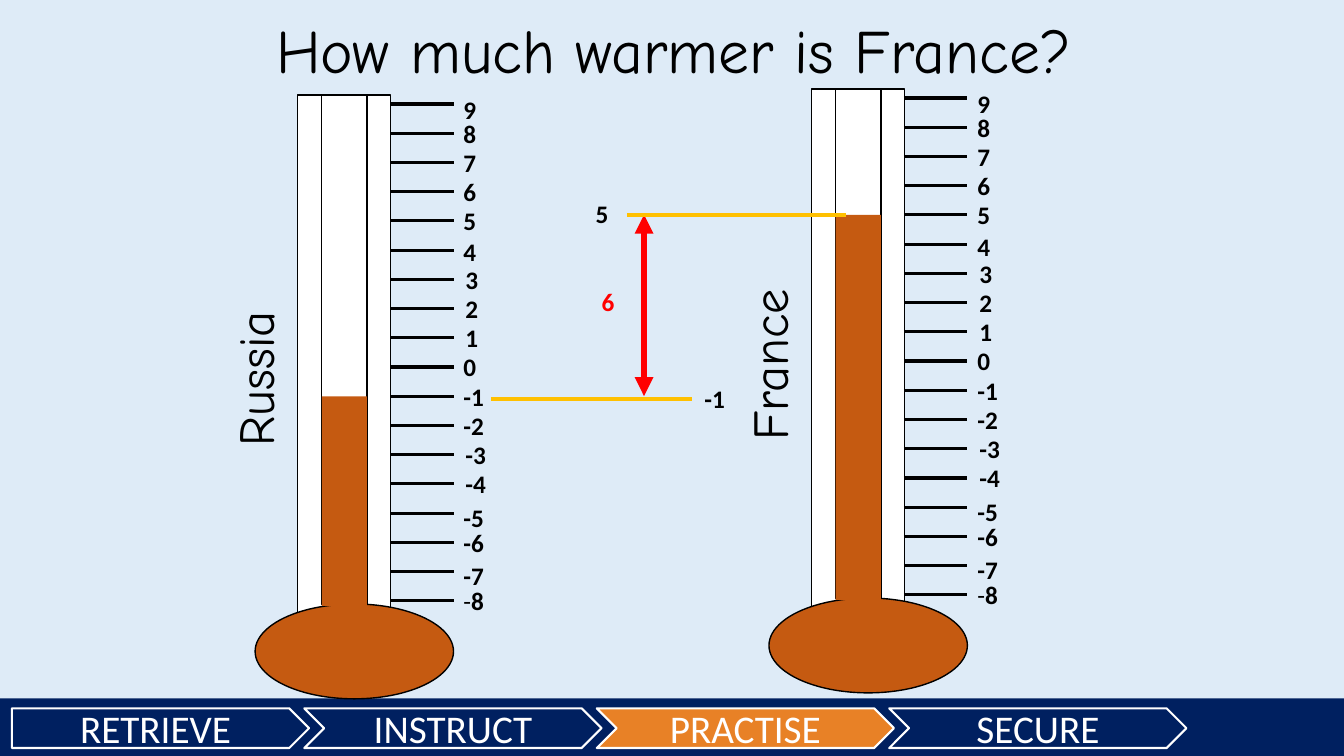
from pptx import Presentation
from pptx import util as u
from pptx.dml import color
from pptx.enum import shapes, text
from pptx.oxml import ns
from lxml import etree

BLACK, WHITE, NAVY, RUST, GOLD, RED = "000000", "FFFFFF", "002060", "C55A11", "FFC000", "FF0000"
KIND = shapes.MSO_SHAPE
STEP = 12.52 / 17
TOP = 0.23


def rgb(code):
    return color.RGBColor.from_string(code)


def write(frame, runs, font="Calibri", size=18, ink=BLACK):
    para = frame.paragraphs[0]
    for words, bold in runs:
        run = para.add_run()
        run.text = words
        run.font.name = font
        run.font.size = u.Pt(size)
        run.font.bold = bold
        run.font.color.rgb = rgb(ink)
    return para


def label(slide, x, y, w, h, runs, **style):
    box = slide.shapes.add_textbox(u.Cm(x), u.Cm(y), u.Cm(w), u.Cm(h))
    box.text_frame.word_wrap = True
    return box, write(box.text_frame, runs, **style)


def shape(slide, kind, x, y, w, h, fill, line=None, width=1):
    item = slide.shapes.add_shape(kind, u.Cm(x), u.Cm(y), u.Cm(w), u.Cm(h))
    item.shadow.inherit = False
    item.fill.solid()
    item.fill.fore_color.rgb = rgb(fill)
    if line:
        item.line.color.rgb = rgb(line)
        item.line.width = u.Pt(width)
    else:
        item.line.fill.background()
    return item


def rule(slide, x, y, end_x, end_y, ink, width, heads=False):
    item = slide.shapes.add_connector(
        shapes.MSO_CONNECTOR.STRAIGHT, u.Cm(x), u.Cm(y), u.Cm(end_x), u.Cm(end_y))
    item.line.color.rgb = rgb(ink)
    item.line.width = u.Pt(width)
    if heads:
        for tag in ("a:headEnd", "a:tailEnd"):
            etree.SubElement(item.line._get_or_add_ln(), ns.qn(tag), type="triangle")
    etree.SubElement(item._element.spPr, ns.qn("a:effectLst"))


def gauge(slide, x, y, place, temp):
    shape(slide, KIND.RECTANGLE, x + 1.07, y, 2.34, 13.92, WHITE, BLACK)
    shape(slide, KIND.OVAL, x, y + 12.83, 5, 2.39, RUST, BLACK)
    shape(slide, KIND.RECTANGLE, x + 1.68, y, 1.14, 12.85, WHITE, BLACK)
    drops = {9: 0.13, 4: 0.05, -5: 0.1, -7: 0.1}
    for i, mark in enumerate(range(9, -9, -1)):
        level = y + TOP + i * STEP
        rule(slide, x + 3.4, level, x + 5, level, BLACK, 2.25)
        shift = 0.05 if mark in (3, 2, 1, -3, -4) else 0
        runs = [("-", False), ("8", True)] if mark == -8 else [(str(mark), True)]
        label(slide, x + 5 + shift, level - 0.51 + drops.get(mark, 0), 2.31, 1.02, runs)
    name, _ = label(slide, x - 2.96, y + 5.25, 5.92, 1.8, [(place, False)],
                    font="Comic Neue", size=36)
    name.rotation = 270
    fill_top = TOP + (9 - temp) * STEP
    shape(slide, KIND.RECTANGLE, x + 1.68, y + fill_top, 1.14, 12.88 - fill_top, RUST)


def gap(slide, x, y):
    rule(slide, x + 0.43, y + 4.57, x + 0.43, y, RED, 4.5, heads=True)
    rule(slide, x, y, x + 5.51, y, GOLD, 3)
    rule(slide, x - 3.43, y + 4.65, x + 1.65, y + 4.65, GOLD, 3)
    for dx, dy, words, ink in ((-1.04, -0.53, "5", BLACK), (1.7, 4.12, "-1", BLACK),
                               (-0.89, 1.68, "6", RED)):
        label(slide, x + dx, y + dy, 2.31, 1.02, [(words, True)], ink=ink)


def steps(slide, x, y, w, h):
    shape(slide, KIND.RECTANGLE, x, y, w, h, NAVY)
    for i, words in enumerate(("RETRIEVE", "INSTRUCT", "PRACTISE", "SECURE")):
        kind = KIND.CHEVRON if i else KIND.PENTAGON
        fill = "E88126" if words == "PRACTISE" else NAVY
        item = shape(slide, kind, x + 0.3 + i * 7.37, y + 0.25, 7.49, 1, fill, WHITE, 1.5)
        item.text_frame.vertical_anchor = text.MSO_ANCHOR.MIDDLE
        para = write(item.text_frame, [(words, False)], size=28, ink=WHITE)
        para.alignment = text.PP_ALIGN.CENTER


def main():
    deck = Presentation()
    deck.slide_width, deck.slide_height = u.Cm(33.87), u.Cm(19.05)
    slide = deck.slides.add_slide(deck.slide_layouts[6])
    slide.background.fill.solid()
    slide.background.fill.fore_color.rgb = rgb("DEEBF7")
    steps(slide, 0, 17.6, 33.87, 1.45)
    gauge(slide, 6.43, 2.39, "Russia", -1)
    gauge(slide, 19.38, 2.24, "France", 5)
    _, para = label(slide, 6.71, 0.38, 22.86, 3.18, [("How much warmer is France?", False)],
                    font="Comic Neue", size=44)
    para.line_spacing = 0.9
    gap(slide, 15.8, 5.41)
    deck.save("out.pptx")


if __name__ == "__main__":
    main()
